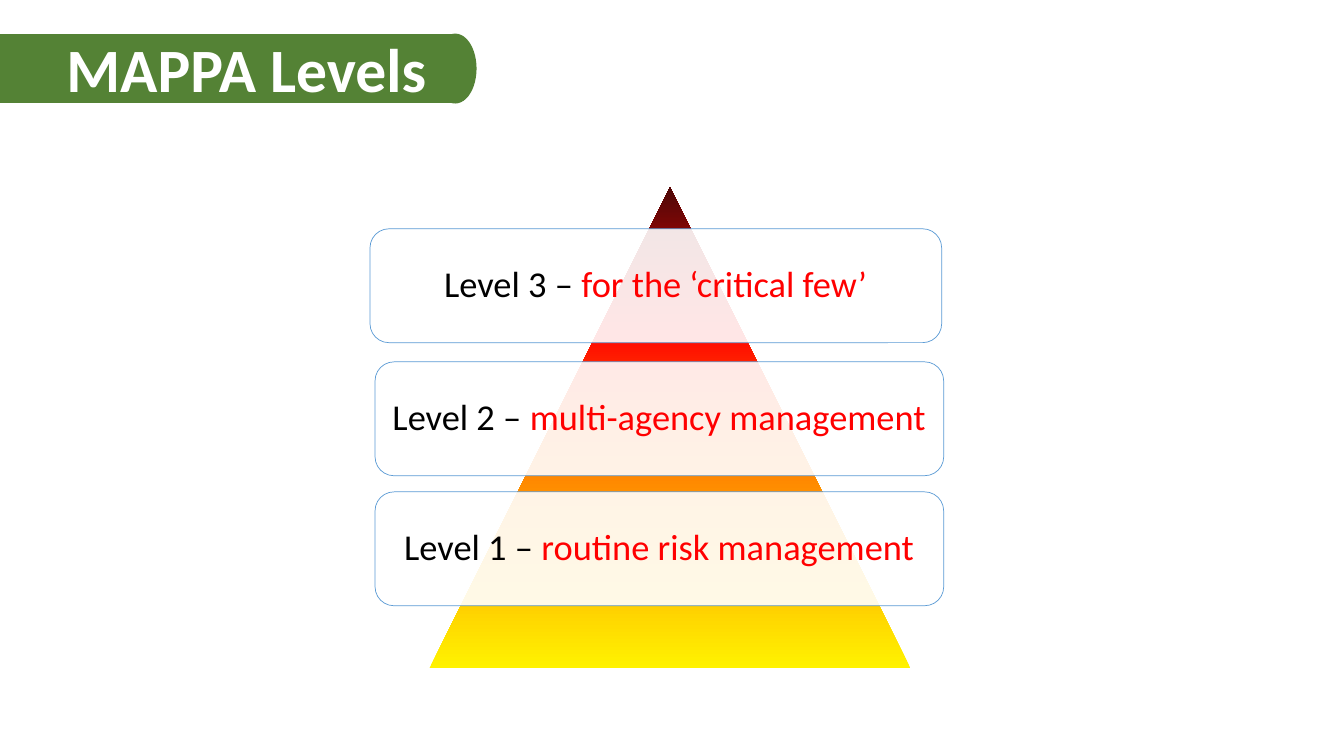
import copy

import pptx
import pptx.dml.color
import pptx.enum.shapes
import pptx.enum.text
import pptx.oxml
import pptx.oxml.ns
import pptx.util
from pptx.util import Inches, Pt

HEADING = "MAPPA Levels"
LEVELS = [
    ("Level 3 – ", "for the ‘critical few’", (3.67, 2.27, 5.67)),
    ("Level 2 – ", "multi-agency management", (3.72, 3.59, 5.64)),
    ("Level 1 – ", "routine risk management", (3.72, 4.88, 5.64)),
]
LEVEL_HEIGHT = 1.13
HEADING_BOX = (-3.08, 0.24, 11.05, 0.95)
PYRAMID_BOX = (4.26, 1.86, 4.77, 4.77)
BANNER = [("RECTANGLE", (0, 0.34, 4.48, 0.68)), ("OVAL", (4.31, 0.34, 0.41, 0.68))]

THEME = {
    "font": "Calibri",
    "heading_size": 44,
    "level_size": 26,
    "banner": "548235",
    "white": "FFFFFF",
    "label": "000000",
    "detail": "FF0000",
    "outline": "5B9BD5",
    "panel_alpha": 90,
    "risk": [(0, "FFF200"), (0.45, "FF7A00"), (0.7, "FF0300"), (1, "4D0808")],
}
FRAME_FORMAT = {
    "word_wrap": True,
    "auto_size": pptx.enum.text.MSO_AUTO_SIZE.NONE,
    "vertical_anchor": pptx.enum.text.MSO_ANCHOR.MIDDLE,
    "margin_left": Inches(0.05),
    "margin_right": Inches(0.05),
    "margin_top": Inches(0.05),
    "margin_bottom": Inches(0.05),
}
PARAGRAPH_FORMAT = {
    "alignment": pptx.enum.text.PP_ALIGN.CENTER,
    "line_spacing": 0.9,
}


def rgb(value):
    return pptx.dml.color.RGBColor.from_string(value)


def apply(target, formats):
    for name, value in formats.items():
        setattr(target, name, value)


def add_part(slide, preset, box):
    kind = getattr(pptx.enum.shapes.MSO_SHAPE, preset)
    part = slide.shapes.add_shape(kind, *map(Inches, box))
    part.shadow.inherit = False
    return part


def paint(part, fill, line, width):
    part.fill.solid()
    part.fill.fore_color.rgb = rgb(fill)
    part.line.color.rgb = rgb(line)
    part.line.width = Pt(width)


def write(part, pieces, size, bold=False):
    apply(part.text_frame, FRAME_FORMAT)
    paragraph = part.text_frame.paragraphs[0]
    apply(paragraph, PARAGRAPH_FORMAT)
    for words, color in pieces:
        run = paragraph.add_run()
        run.text = words
        apply(run.font, {"name": THEME["font"], "size": Pt(size), "bold": bold})
        run.font.color.rgb = rgb(color)


def add_heading(slide):
    for preset, box in BANNER:
        paint(add_part(slide, preset, box), THEME["banner"], THEME["banner"], 1)
    heading = slide.shapes.title
    apply(heading, dict(zip(("left", "top", "width", "height"), map(Inches, HEADING_BOX))))
    write(heading, [(HEADING, THEME["white"])], THEME["heading_size"], True)
    slide.shapes._spTree.append(heading._element)


def add_pyramid(slide):
    pyramid = add_part(slide, "ISOSCELES_TRIANGLE", PYRAMID_BOX)
    pyramid.line.fill.background()
    pyramid.fill.gradient()
    pyramid.fill.gradient_angle = 90
    stops = pyramid._element.spPr.find(".//" + pptx.oxml.ns.qn("a:gsLst"))
    for _ in range(len(THEME["risk"]) - len(stops)):
        stops.append(copy.deepcopy(stops[0]))
    for stop, (position, color) in zip(pyramid.fill.gradient_stops, THEME["risk"]):
        stop.position = position
        stop.color.rgb = rgb(color)


def add_level(slide, label, detail, place):
    level = add_part(slide, "ROUNDED_RECTANGLE", (*place, LEVEL_HEIGHT))
    paint(level, THEME["white"], THEME["outline"], 0.5)
    color = level._element.spPr.find(pptx.oxml.ns.qn("a:solidFill"))[0]
    alpha = pptx.oxml.parse_xml(f"<a:alpha {pptx.oxml.ns.nsdecls('a')}/>")
    alpha.set("val", str(THEME["panel_alpha"] * 1000))
    color.append(alpha)
    write(level, [(label, THEME["label"]), (detail, THEME["detail"])], THEME["level_size"])


def main():
    deck = pptx.Presentation()
    apply(deck, {"slide_width": Inches(13.33), "slide_height": Inches(7.5)})
    slide = deck.slides.add_slide(deck.slide_layouts[5])
    add_heading(slide)
    add_pyramid(slide)
    for label, detail, place in LEVELS:
        add_level(slide, label, detail, place)
    deck.save("out.pptx")


if __name__ == "__main__":
    main()
